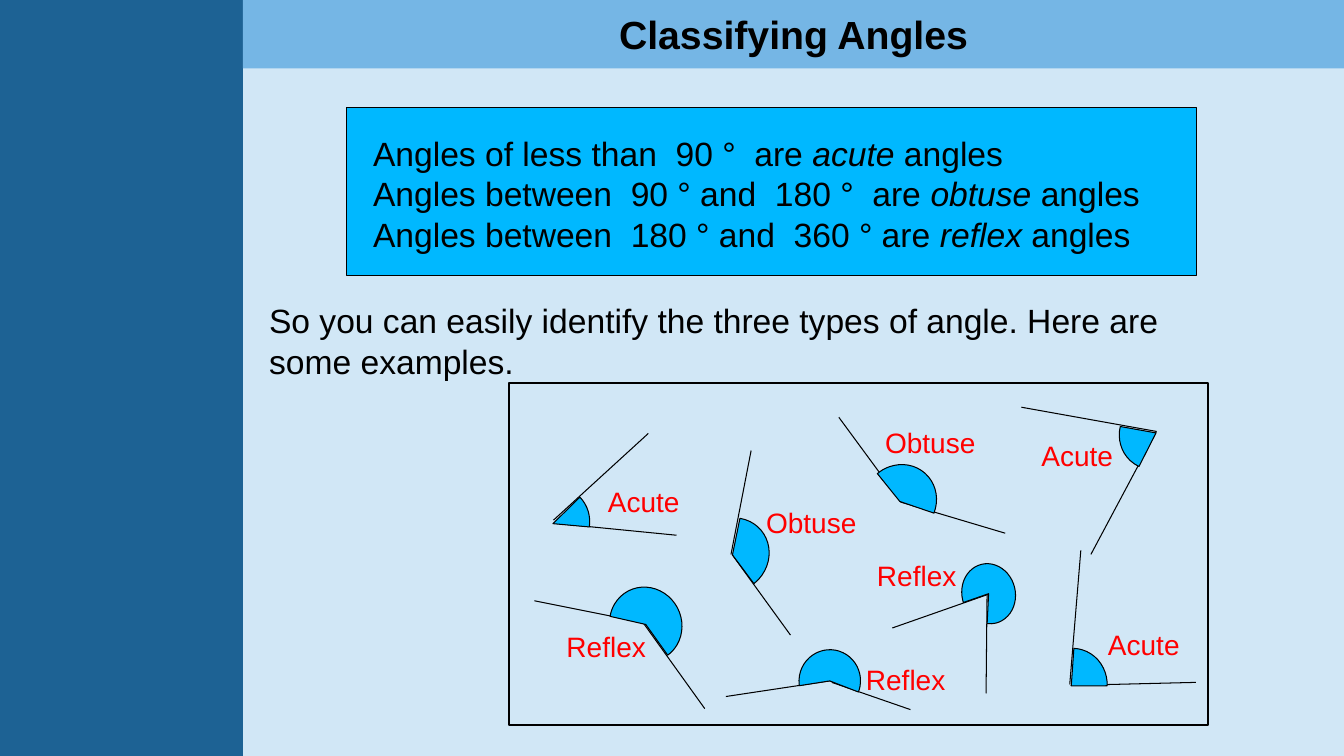
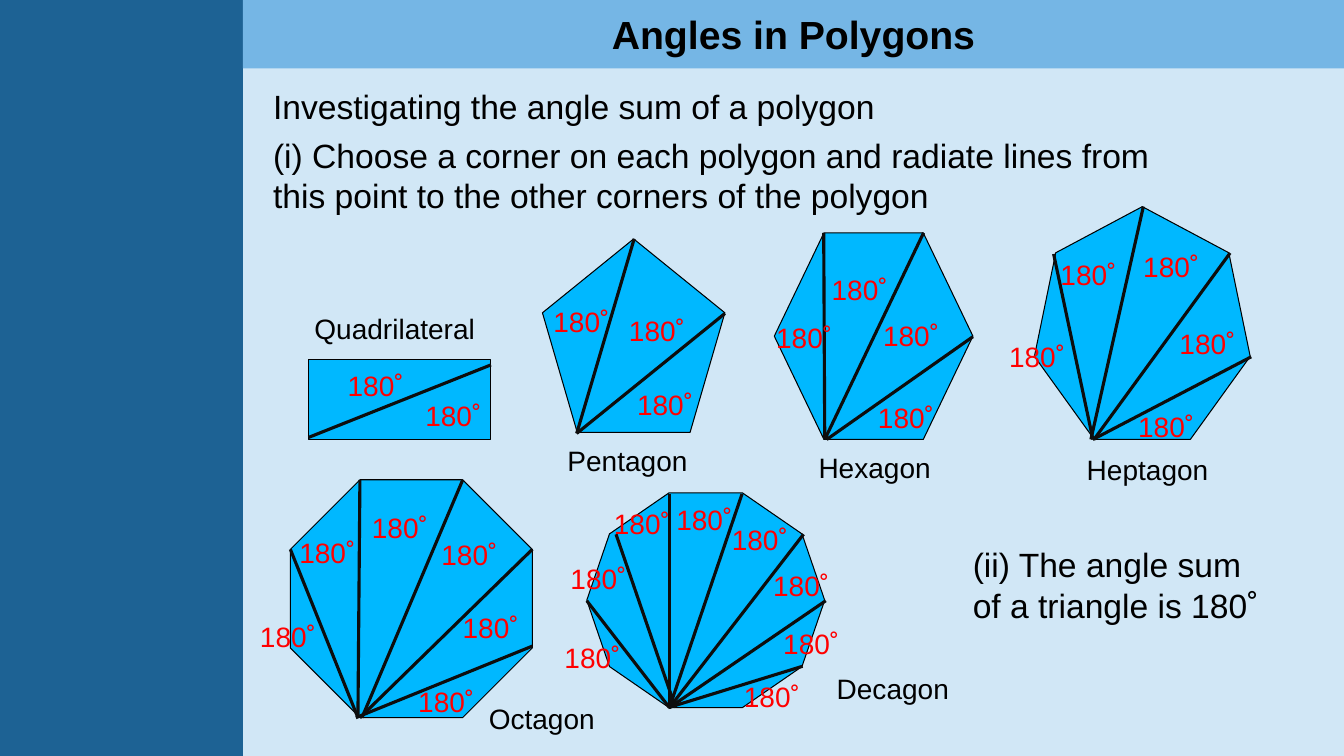
from typing import NamedTuple

from lxml import etree
from pptx import Presentation
from pptx.dml.color import RGBColor
from pptx.enum.shapes import MSO_CONNECTOR, MSO_SHAPE
from pptx.enum.text import MSO_ANCHOR, MSO_AUTO_SIZE, PP_ALIGN
from pptx.oxml.ns import qn
from pptx.util import Inches, Pt

SIDEBAR = RGBColor(0x1D, 0x62, 0x94)
HEADER = RGBColor(0x75, 0xB6, 0xE5)
PAGE = RGBColor(0xD1, 0xE7, 0xF6)
FIGURE = RGBColor(0x00, 0xB8, 0xFF)
BLACK = RGBColor(0x00, 0x00, 0x00)
DIAGONAL = RGBColor(0x0D, 0x0D, 0x0D)
RED = RGBColor(0xFF, 0x00, 0x00)
FONT = "Arial"

RECTANGLE = MSO_SHAPE.RECTANGLE
PIE = MSO_SHAPE.PIE
STRAIGHT = MSO_CONNECTOR.STRAIGHT
TOP, MIDDLE = MSO_ANCHOR.TOP, MSO_ANCHOR.MIDDLE
LEFT, CENTER = PP_ALIGN.LEFT, PP_ALIGN.CENTER

SLIDE_W, SLIDE_H = 13.33, 7.5
SIDEBAR_W, HEADER_H = 2.41, 0.68
LABEL_H = 0.44
SUM_W = 0.76
LABEL_WIDTHS = {"Acute": 0.92, "Obtuse": 1.1, "Reflex": 1.0}

RULES = [
    "Angles of less than  90 °  are *acute* angles",
    "Angles between  90 ° and  180 °  are *obtuse* angles",
    "Angles between  180 ° and  360 ° are *reflex *angles",
]


class Angle(NamedTuple):
    """Places are relative to the examples frame; an arm is (tip, vertex).

    Start and end are the sector's adjustments, in units of 5/3 degree.
    """
    kind: str
    label_at: tuple
    sector: tuple
    rotation: float
    start: float
    end: float
    arms: tuple


class Polygon(NamedTuple):
    """Places are relative to the box; a diagonal is (foot x, tip x, tip y)."""
    name: str
    outline: MSO_SHAPE
    box: tuple
    name_box: tuple
    foot_y: float
    diagonals: list
    sums: list


ANGLES = [
    Angle("Acute", (0.88, 0.96), (0.06, 1.04, 0.75, 0.71), 312, 2.08, 31.93,
          (((1.38, 0.5), (0.44, 1.36)), ((1.66, 1.51), (0.44, 1.39)))),
    Angle("Obtuse", (2.45, 1.17), (1.84, 1.35, 0.75, 0.71), 312, 197.73, 60.77,
          (((2.4, 0.67), (2.2, 1.7)), ((2.79, 2.5), (2.21, 1.7)))),
    Angle("Obtuse", (3.63, 0.37), (3.5, 0.82, 0.75, 0.71), 312, 167.45, 40.12,
          (((3.27, 0.34), (3.88, 1.17)), ((4.92, 1.49), (3.88, 1.18)))),
    Angle("Reflex", (0.47, 2.4), (0.98, 2.04, 0.75, 0.71), 242.2, 186.37, 103.35,
          (((0.25, 2.16), (1.35, 2.38)), ((1.94, 3.23), (1.33, 2.38)))),
    Angle("Reflex", (3.55, 1.69), (4.49, 1.79, 0.53, 0.6), 166.5, 212.67, 171.83,
          (((3.8, 2.43), (4.77, 2.09)), ((4.73, 3.08), (4.74, 2.1)))),
    Angle("Acute", (5.84, 2.38), (5.2, 2.65, 0.75, 0.71), 287.1, 208.16, 43.56,
          (((5.67, 1.66), (5.56, 2.99)), ((6.81, 2.97), (5.57, 3.0)))),
    Angle("Acute", (5.18, 0.5), (6.04, 0.14, 0.75, 0.71), 132.8, 206.47, 34.46,
          (((5.77, 1.7), (6.42, 0.48)), ((5.08, 0.24), (6.42, 0.48)))),
    Angle("Reflex", (3.44, 2.72), (2.87, 2.65, 0.62, 0.61), 280.3, 150.49, 60.49,
          (((3.98, 3.24), (3.2, 2.97)), ((2.15, 3.11), (3.21, 2.95)))),
]

POLYGONS = [
    Polygon("Quadrilateral", RECTANGLE, (3.06, 3.57, 1.81, 0.79),
            (-0.04, -0.53, 1.79), 0.77,
            [(0, 1.81, 0.05)],
            [(0.29, 0.04), (1.06, 0.33)]),
    Polygon("Pentagon", MSO_SHAPE.REGULAR_PENTAGON, (5.38, 2.37, 1.81, 1.92),
            (0.15, 1.98, 1.4), 1.93,
            [(0.34, 1.81, 0.74), (0.34, 0.91, 0)],
            [(0.01, 0.6), (0.84, 1.43), (0.76, 0.69)]),
    Polygon("Hexagon", MSO_SHAPE.HEXAGON, (7.68, 2.31, 1.97, 2.05),
            (0.34, 2.11, 1.33), 2.05,
            [(0.52, 1.97, 1.03), (0.5, 1.48, 0), (0.5, 0.49, 0)],
            [(-0.08, 0.82), (0.47, 0.34), (0.98, 0.8), (0.93, 1.61)]),
    Polygon("Heptagon", MSO_SHAPE.HEPTAGON, (10.26, 2.05, 2.14, 2.31),
            (0.42, 2.39, 1.42), 2.31,
            [(0.58, 2.15, 1.49), (0.59, 1.94, 0.46), (0.56, 1.08, 0),
             (0.58, 0.19, 0.47)],
            [(-0.35, 1.27), (0.16, 0.46), (0.98, 0.38), (1.34, 1.14),
             (0.93, 1.96)]),
    Polygon("Octagon", MSO_SHAPE.OCTAGON, (2.88, 4.76, 2.4, 2.36),
            (1.87, 2.15, 1.26), 2.36,
            [(0.65, 2.4, 1.65), (0.69, 2.4, 0.69), (0.71, 1.71, 0),
             (0.67, 0.69, 0), (0.67, 0, 0.69)],
            [(0.71, 0.26), (1.4, 0.52), (1.61, 1.25), (1.17, 1.98),
             (-0.01, 0.5), (-0.4, 1.34)]),
    Polygon("Decagon", MSO_SHAPE.DECAGON, (5.82, 4.89, 2.36, 2.13),
            (2.38, 1.72, 1.33), 2.13,
            [(0.81, 2.14, 1.72), (0.82, 2.37, 1.07), (0.82, 2.15, 0.41),
             (0.82, 1.54, 0.01), (0.82, 0.82, 0.01), (0.88, 0.29, 0.41),
             (0.82, 0, 1.07)],
            [(0.79, 0.05), (1.34, 0.24), (1.75, 0.7), (1.85, 1.28),
             (0.17, 0.09), (-0.26, 0.63), (-0.32, 1.42), (1.46, 1.8)]),
]


def write_text(frame, paragraphs, size=24, color=BLACK, bold=False, align=LEFT,
               anchor=TOP, wrap=True, inset=(0.1, 0.05)):
    """Fill a text frame; words between asterisks become italic."""
    frame.word_wrap = wrap
    frame.auto_size = MSO_AUTO_SIZE.NONE
    frame.vertical_anchor = anchor
    frame.margin_left, frame.margin_top = Inches(inset[0]), Inches(inset[1])
    frame.margin_right, frame.margin_bottom = Inches(0.1), Inches(0.05)
    for index, text in enumerate(paragraphs):
        paragraph = frame.paragraphs[0] if index == 0 else frame.add_paragraph()
        paragraph.alignment = align
        for part, words in enumerate(text.split("*")):
            run = paragraph.add_run()
            run.text = words
            run.font.name = FONT
            run.font.size = Pt(size)
            run.font.bold = bold
            run.font.italic = part % 2 == 1
            run.font.color.rgb = color


def add_text(slide, text, left, top, width, height, **text_format):
    box = slide.shapes.add_textbox(Inches(left), Inches(top),
                                   Inches(width), Inches(height))
    write_text(box.text_frame, [text], **text_format)


def add_label(slide, text, left, top, width, color=BLACK):
    add_text(slide, text, left, top, width, LABEL_H,
             size=20, color=color, wrap=False)


def add_figure(slide, outline, left, top, width, height,
               fill=FIGURE, line=BLACK, weight=0.75):
    figure = slide.shapes.add_shape(outline, Inches(left), Inches(top),
                                    Inches(width), Inches(height))
    figure.shadow.inherit = False
    if fill is None:
        figure.fill.background()
    else:
        figure.fill.solid()
        figure.fill.fore_color.rgb = fill
    if line is None:
        figure.line.fill.background()
    else:
        figure.line.color.rgb = line
        figure.line.width = Pt(weight)
    return figure


def add_line(slide, start, end, color=BLACK, weight=0.75):
    line = slide.shapes.add_connector(STRAIGHT, *map(Inches, start + end))
    line.line.color.rgb = color
    line.line.width = Pt(weight)
    etree.SubElement(line.element.spPr, qn("a:effectLst"))


def shift(origin, point):
    return origin[0] + point[0], origin[1] + point[1]


def add_bands(slide):
    """Draw the sidebar and header, then hand them to the slide's layout."""
    layout = slide.slide_layout
    layout.background.fill.solid()
    layout.background.fill.fore_color.rgb = PAGE
    bands = [((0, 0, SIDEBAR_W, SLIDE_H), SIDEBAR),
             ((SIDEBAR_W, 0, SLIDE_W - SIDEBAR_W, HEADER_H), HEADER)]
    for position, (box, color) in enumerate(bands, start=2):
        band = add_figure(slide, RECTANGLE, *box, fill=color, line=None)
        layout.shapes.element.insert(position, band.element)


def start_slide(prs, title_text):
    slide = prs.slides.add_slide(prs.slide_layouts[5])
    title = slide.shapes.title
    title.left, title.top = Inches(SIDEBAR_W), Inches(0.05)
    title.width, title.height = Inches(SLIDE_W - SIDEBAR_W), Inches(0.57)
    write_text(title.text_frame, [title_text], size=28, bold=True,
               align=CENTER, anchor=MIDDLE)
    return slide


def draw_angle(slide, origin, angle):
    for tip, vertex in angle.arms:
        add_line(slide, shift(origin, tip), shift(origin, vertex))
    left, top, width, height = angle.sector
    sector = add_figure(slide, PIE, *shift(origin, (left, top)), width, height)
    sector.rotation = angle.rotation
    sector.adjustments[0] = angle.start
    sector.adjustments[1] = angle.end
    add_label(slide, angle.kind, *shift(origin, angle.label_at),
              LABEL_WIDTHS[angle.kind], RED)


def draw_examples(slide, left, top, width, height):
    add_figure(slide, RECTANGLE, left, top, width, height, fill=None, weight=1.5)
    for angle in ANGLES:
        draw_angle(slide, (left, top), angle)


def draw_polygon(slide, polygon):
    origin = polygon.box[:2]
    add_figure(slide, polygon.outline, *polygon.box)
    for foot_x, tip_x, tip_y in polygon.diagonals:
        add_line(slide, shift(origin, (foot_x, polygon.foot_y)),
                 shift(origin, (tip_x, tip_y)), DIAGONAL, 2.25)
    for place in polygon.sums:
        add_label(slide, "180˚", *shift(origin, place), SUM_W, RED)
    add_label(slide, polygon.name, *shift(origin, polygon.name_box),
              polygon.name_box[2])


def build_classifying(prs):
    slide = start_slide(prs, "Classifying Angles")
    add_bands(slide)
    rules = add_figure(slide, RECTANGLE, 3.44, 1.07, 8.43, 1.66)
    write_text(rules.text_frame, RULES, inset=(0.26, 0.25))
    add_text(slide, "So you can easily identify the three types of angle. "
             "Here are some examples.", 2.57, 2.93, 9.92, 0.91)
    draw_examples(slide, 5.05, 3.8, 6.93, 3.39)


def build_polygons(prs):
    slide = start_slide(prs, "Angles in Polygons")
    add_text(slide, "Investigating the angle sum of a polygon",
             2.61, 0.8, 6.54, 0.5)
    add_text(slide, "(i) Choose a corner on each polygon and radiate lines from "
             "this point to the other corners of the polygon",
             2.61, 1.29, 9.48, 0.91)
    for polygon in POLYGONS:
        draw_polygon(slide, polygon)
    add_text(slide, "(ii) The angle sum of a triangle is 180˚",
             9.55, 5.35, 3.14, 0.91)


def main():
    prs = Presentation()
    prs.slide_width, prs.slide_height = Inches(SLIDE_W), Inches(SLIDE_H)
    build_classifying(prs)
    build_polygons(prs)
    prs.save("out.pptx")


if __name__ == "__main__":
    main()
